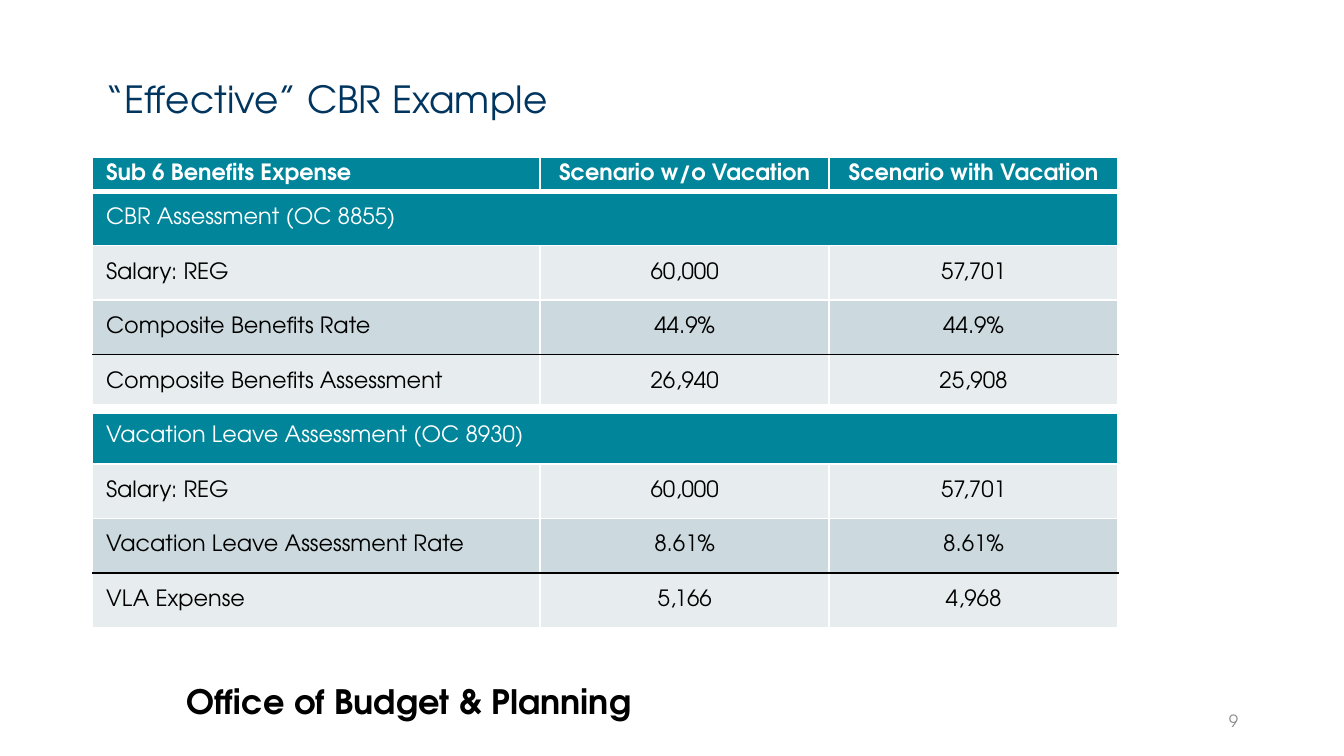
from lxml import etree
from pptx import Presentation
from pptx import util as u
from pptx.dml.color import RGBColor
from pptx.enum import text
from pptx.oxml import ns

FONT = "TeX Gyre Adventor"
NAVY = RGBColor(0x00, 0x35, 0x5F)
TEAL = RGBColor(0x01, 0x85, 0x9A)
LIGHT = RGBColor(0xE7, 0xED, 0xEF)
MID = RGBColor(0xCC, 0xD9, 0xDE)
GRAY = RGBColor(0x8C, 0x8C, 0x8C)
WHITE = RGBColor(0xFF, 0xFF, 0xFF)
BLACK = RGBColor(0x00, 0x00, 0x00)

HEADER, SECTION, PLAIN, RATE, TOTAL = "header", "section", "plain", "rate", "total"
FILLS = {HEADER: TEAL, SECTION: TEAL, PLAIN: LIGHT, RATE: MID, TOTAL: LIGHT}
ROWS = [
    (HEADER, "Sub 6 Benefits Expense", "Scenario w/o Vacation", "Scenario with Vacation"),
    (SECTION, "CBR Assessment (OC 8855)"),
    (PLAIN, "Salary: REG", "60,000", "57,701"),
    (RATE, "Composite Benefits Rate", "44.9%", "44.9%"),
    (TOTAL, "Composite Benefits Assessment", "26,940", "25,908"),
    (SECTION, "Vacation Leave Assessment (OC 8930)"),
    (PLAIN, "Salary: REG", "60,000", "57,701"),
    (RATE, "Vacation Leave Assessment Rate", "8.61%", "8.61%"),
    (TOTAL, "VLA Expense", "5,166", "4,968"),
]
COLUMN_WIDTHS = (8.46, 5.46, 5.46)
HEADER_HEIGHT, ROW_HEIGHT = 0.64, 1.03


def set_font(paragraph, size, color, bold=False):
    font = paragraph.font
    font.name, font.size, font.bold = FONT, u.Pt(size), bold
    font.color.rgb = color


def add_label(slide, box, wording, size, color, bold=False,
              align=text.PP_ALIGN.LEFT, anchor=text.MSO_ANCHOR.MIDDLE, spacing=None):
    frame = slide.shapes.add_textbox(*map(u.Cm, box)).text_frame
    frame.word_wrap = True
    frame.vertical_anchor = anchor
    paragraph = frame.paragraphs[0]
    paragraph.text = wording
    paragraph.alignment = align
    paragraph.line_spacing = spacing
    set_font(paragraph, size, color, bold)


def set_border(cell, side, color, width):
    properties = cell._tc.get_or_add_tcPr()
    line = etree.SubElement(properties, ns.qn(f"a:ln{side}"), w=str(u.Pt(width)))
    fill = etree.SubElement(line, ns.qn("a:solidFill"))
    etree.SubElement(fill, ns.qn("a:srgbClr"), val=str(color))


def edge_between(upper, lower):
    """Colour and width of the rule between two kinds of row."""
    if upper == HEADER:
        return WHITE, 3
    if upper == RATE:
        return BLACK, 1
    if (upper, lower) == (TOTAL, SECTION):
        return WHITE, 6
    return WHITE, 1


def add_benefits_table(slide, left, top):
    height = HEADER_HEIGHT + ROW_HEIGHT * (len(ROWS) - 1)
    box = (left, top, sum(COLUMN_WIDTHS), height)
    table = slide.shapes.add_table(len(ROWS), len(COLUMN_WIDTHS), *map(u.Cm, box)).table
    for column, width in zip(table.columns, COLUMN_WIDTHS):
        column.width = u.Cm(width)

    kinds = [None, *(row[0] for row in ROWS), None]
    for i, (kind, *values) in enumerate(ROWS):
        table.rows[i].height = u.Cm(HEADER_HEIGHT if kind == HEADER else ROW_HEIGHT)
        above = edge_between(kinds[i], kind)
        below = edge_between(kind, kinds[i + 2])
        for j in range(len(COLUMN_WIDTHS)):
            cell = table.cell(i, j)
            cell.vertical_anchor = text.MSO_ANCHOR.MIDDLE
            cell.margin_top = cell.margin_bottom = 0
            for side, edge in zip("LRTB", ((WHITE, 1), (WHITE, 1), above, below)):
                set_border(cell, side, *edge)
            cell.fill.solid()
            cell.fill.fore_color.rgb = FILLS[kind]
            paragraph = cell.text_frame.paragraphs[0]
            if j < len(values):
                paragraph.text = values[j]
            paragraph.alignment = text.PP_ALIGN.CENTER if j else text.PP_ALIGN.LEFT
            set_font(paragraph, 12, WHITE if FILLS[kind] == TEAL else BLACK, kind == HEADER)
        if kind == SECTION:
            table.cell(i, 0).merge(table.cell(i, len(COLUMN_WIDTHS) - 1))


def main():
    presentation = Presentation()
    presentation.slide_width, presentation.slide_height = u.Cm(25.4), u.Cm(14.28)
    slide = presentation.slides.add_slide(presentation.slide_layouts[6])

    # Footer
    add_label(slide, (3.28, 12.73, 11.05, 1.02), "Office of Budget & Planning", 18, BLACK,
              bold=True, anchor=text.MSO_ANCHOR.TOP)
    # Title
    add_label(slide, (1.75, 1.27, 16.43, 1.3), "“Effective” CBR Example", 20, NAVY, spacing=0.9)
    # Slide number
    add_label(slide, (17.93, 13.23, 5.72, 0.76), "9", 9, GRAY, align=text.PP_ALIGN.RIGHT)
    # Comparison of the two scenarios
    add_benefits_table(slide, 1.75, 2.97)

    presentation.save("out.pptx")


if __name__ == "__main__":
    main()
